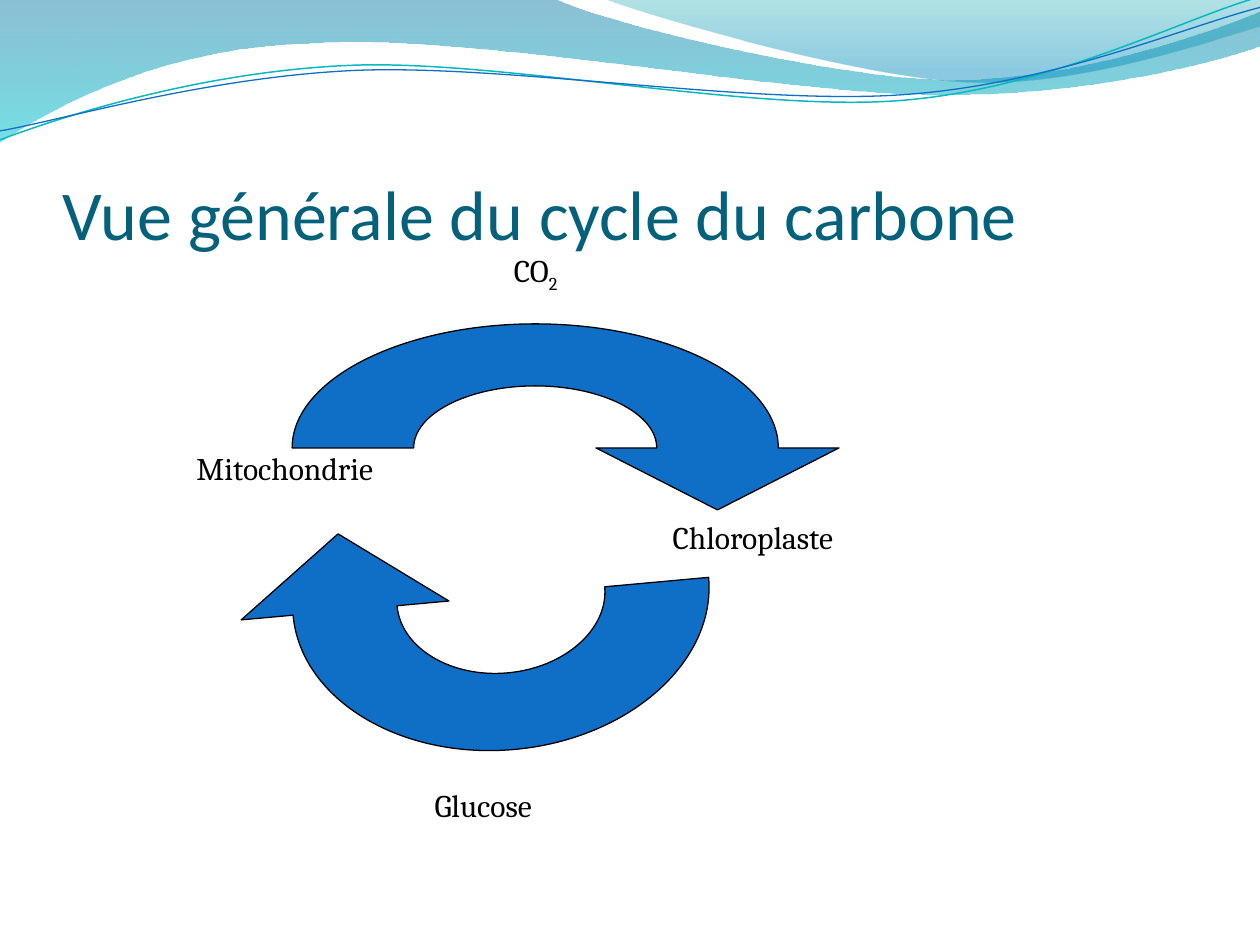
import math
from pptx import Presentation, util as u
from pptx.dml.color import RGBColor
from pptx.enum import text
from pptx.oxml.ns import qn
from lxml import etree

COLORS = {"title": "04617B", "text": "000000", "arrow": "0F6FC6", "teal": "0AB8BF",
          "wave_blue": "0074A1", "wave_cyan": "00C6CF",
          "crest_teal": "00A1A9", "crest_blue": "008BBF"}

WAVES = [
    {"box": (-0.03, -0.03, 25.46, 2.9), "angle": 0,
     "path": [(0, 0), (11.18, -0.03), (12.09, 0.43, 16.87, 1.6, 19.25, 1.6),
              (21.67, 1.6, 24.33, 0.66, 25.4, 0.23), (25.43, 0.91),
              (24.97, 1.12, 22.1, 1.93, 18.95, 1.91), (15.8, 1.91, 9.7, 0.71, 6.53, 0.86),
              (3.28, 0.91, 1.17, 2.11, -0.03, 2.87), (0, 0)],
     "stops": [(0, "wave_blue", 45), (1, "wave_cyan", 55)]},
    {"box": (12.17, -0.03, 13.23, 1.78), "angle": 0,
     "path": [(12.17, -0.03), (12.93, 0.28, 17.32, 1.57, 19.53, 1.65),
              (21.74, 1.75, 24.41, 0.81, 25.4, 0.53), (25.4, 0), (12.17, -0.03)],
     "stops": [(0, "crest_teal", 30), (0.8, "crest_blue", 45)]},
    {"box": (-0.05, 0.56, 25.45, 1.8), "angle": 357.3,
     "path": [(0, 2.82), (1.22, 2.36, 4.01, 1.45, 7.04, 1.32),
              (10.03, 1.19, 15.06, 2.26, 18.11, 2.03), (21.16, 1.8, 23.83, 0.38, 25.35, -0.05)],
     "line": ("teal", 0.85)},
    {"box": (-0.05, 0.76, 25.48, 1.47), "angle": 357.3,
     "path": [(0, 2.64), (1.19, 2.44, 4.17, 1.55, 7.19, 1.42),
              (10.24, 1.3, 15.16, 2.13, 18.21, 1.91), (21.23, 1.7, 23.9, 0.53, 25.4, 0.15)],
     "line": ("arrow", 0.75)},
]

ARROWS = [
    {"box": (5.89, 8.92, 8.41, 6.2), "angle": 174.8},
    {"box": (5.89, 6.53, 9.8, 5), "angle": 0},
]
K = 0.55
ARROW_PATH = [(0.5, 0), (0.5, -K / 2, K / 2, -0.5, 0, -0.5), (-K / 2, -0.5, -0.5, -K / 2, -0.5, 0),
              (-1, 0), (-1, -K, -K, -1, 0, -1), (K, -1, 1, -K, 1, 0),
              (1.25, 0), (0.75, 0.5), (0.25, 0), (0.5, 0)]

TITLE = {"runs": ["Vue générale du cycle du carbone"], "box": (1.27, 1.96, 23.06, 3.18),
         "font": {"name": "Calibri", "size": u.Pt(40)}, "color": "title",
         "frame": {"word_wrap": True, "vertical_anchor": text.MSO_ANCHOR.BOTTOM,
                   "margin_left": 0, "margin_right": 0, "margin_bottom": 0}}
LABEL = {"font": {"name": "Cambria", "size": u.Pt(18)}, "color": "text",
         "frame": {"word_wrap": False, "auto_size": text.MSO_AUTO_SIZE.SHAPE_TO_FIT_TEXT}}
SIDE_LABELS = [
    (["Mitochondrie"], (3.71, 8.92, 5.11, 1.27)),
    (["Chloroplaste"], (13.31, 10.31, 4.83, 1.27)),
]
END_LABELS = [
    (["Glucose"], (8.51, 15.72, 3.28, 1.27)),
    (["CO", "2"], (10.11, 4.93, 1.98, 1.27)),
]


def rgb(name):
    return RGBColor.from_string(COLORS[name])


def set_all(obj, values):
    for name, value in values.items():
        setattr(obj, name, value)


def pairs(seg):
    return list(zip(seg[::2], seg[1::2]))


def page_to_box(box, angle, pt):
    left, top, w, h = box
    c, d = math.cos(math.radians(angle)), math.sin(math.radians(angle))
    x, y = pt[0] - left - w / 2, pt[1] - top - h / 2
    return w / 2 + x * c + y * d, h / 2 - x * d + y * c


def add_curve(s, box, angle, path, close):
    left, top, w, h = map(u.Cm, box)
    fb = s.shapes.build_freeform(left, top)
    fb.add_line_segments([(left + w, top), (left + w, top + h), (left, top + h)])
    sp = fb.convert_to_shape()
    outline = sp._element.spPr.find(".//" + qn("a:path"))
    for child in list(outline):
        outline.remove(child)
    for i, seg in enumerate(path):
        tag = "a:moveTo" if i == 0 else "a:lnTo" if len(seg) == 1 else "a:cubicBezTo"
        step = etree.SubElement(outline, qn(tag))
        for x, y in seg:
            pt = etree.SubElement(step, qn("a:pt"))
            pt.set("x", str(int(u.Cm(x))))
            pt.set("y", str(int(u.Cm(y))))
    if close:
        etree.SubElement(outline, qn("a:close"))
    sp.rotation = angle
    sp.shadow.inherit = False
    return sp


def set_line(sp, color, width):
    sp.line.color.rgb = rgb(color)
    sp.line.width = u.Pt(width)


def add_wave(s, wave):
    box, angle = wave["box"], wave["angle"]
    path = [[page_to_box(box, angle, pt) for pt in pairs(seg)] for seg in wave["path"]]
    sp = add_curve(s, box, angle, path, "stops" in wave)
    if "line" in wave:
        sp.fill.background()
        set_line(sp, *wave["line"])
        return
    sp.line.fill.background()
    sp.fill.gradient()
    sp.fill.gradient_angle = 270
    for stop, (pos, color, _) in zip(sp.fill.gradient_stops, wave["stops"]):
        stop.position = pos
        stop.color.rgb = rgb(color)
    for clr, (_, _, alpha) in zip(sp._element.spPr.iter(qn("a:srgbClr")), wave["stops"]):
        etree.SubElement(clr, qn("a:alpha")).set("val", str(alpha * 1000))


def add_arrow(s, box, angle):
    rx, ry = box[2] / 2, box[3] / 2
    path = [[(rx * (1 + x), ry * (1 + y)) for x, y in pairs(seg)] for seg in ARROW_PATH]
    sp = add_curve(s, box, angle, path, True)
    sp.fill.solid()
    sp.fill.fore_color.rgb = rgb("arrow")
    set_line(sp, "text", 0.75)


def add_text(s, runs, box, font, color, frame):
    tf = s.shapes.add_textbox(*map(u.Cm, box)).text_frame
    set_all(tf, frame)
    p = tf.paragraphs[0]
    for i, part in enumerate(runs):
        r = p.add_run()
        r.text = part
        set_all(r.font, font)
        r.font.color.rgb = rgb(color)
        if i:
            r._r.get_or_add_rPr().set("baseline", "-25000")


def main():
    prs = Presentation()
    set_all(prs, {"slide_width": u.Cm(25.4), "slide_height": u.Cm(19.05)})
    s = prs.slides.add_slide(prs.slide_layouts[6])
    for wave in WAVES:
        add_wave(s, wave)
    add_text(s, **TITLE)
    for runs, box in SIDE_LABELS:
        add_text(s, runs, box, **LABEL)
    for arrow in ARROWS:
        add_arrow(s, **arrow)
    for runs, box in END_LABELS:
        add_text(s, runs, box, **LABEL)
    prs.save("out.pptx")


if __name__ == "__main__":
    main()
